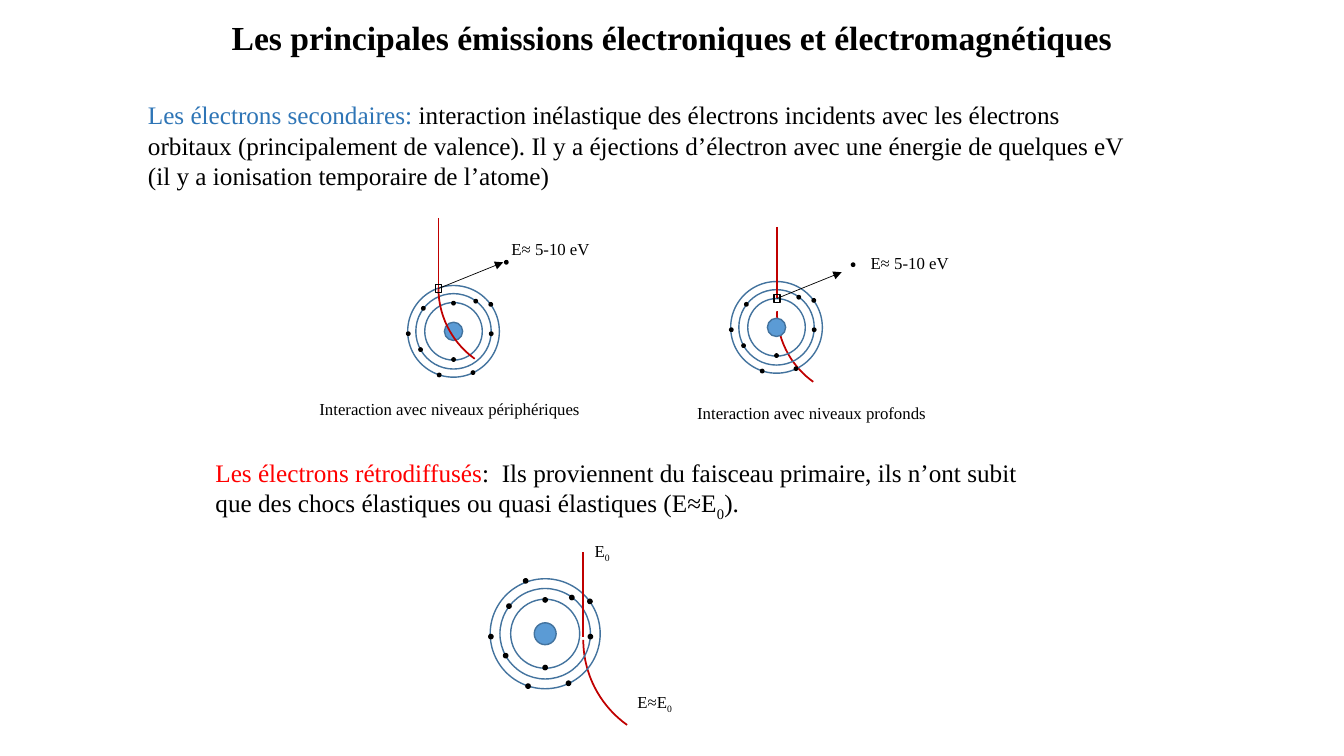
"""Build a slide on secondary and backscattered electron emission."""
from dataclasses import dataclass

from pptx import Presentation
from pptx.dml.color import RGBColor
from pptx.enum.shapes import MSO_CONNECTOR, MSO_SHAPE
from pptx.enum.text import MSO_AUTO_SIZE, PP_ALIGN
from pptx.oxml.ns import qn
from pptx.oxml.xmlchemy import OxmlElement
from pptx.shapes.autoshape import Shape
from pptx.shapes.connector import Connector
from pptx.shapes.shapetree import GroupShapes, SlideShapes
from pptx.util import Cm, Pt

ARC, OVAL, RECT = MSO_SHAPE.ARC, MSO_SHAPE.OVAL, MSO_SHAPE.RECTANGLE
STRAIGHT = MSO_CONNECTOR.STRAIGHT
FIT_TEXT = MSO_AUTO_SIZE.SHAPE_TO_FIT_TEXT
LEFT, CENTER = PP_ALIGN.LEFT, PP_ALIGN.CENTER

Shapes = SlideShapes | GroupShapes
Point = tuple[float, float]


@dataclass(frozen=True)
class Theme:
    """Colours and type sizes of the slide."""
    font: str = "Times New Roman"
    title: int = 24
    body: int = 18
    label: int = 12
    black: str = "000000"
    blue: str = "2E75B6"
    red: str = "FF0000"
    beam: str = "C00000"
    nucleus: str = "5B9BD5"
    orbit: str = "43739E"


THEME = Theme()


@dataclass(frozen=True)
class Span:
    """A piece of text with its own colour or subscript."""
    text: str
    color: str = THEME.black
    subscript: bool = False


@dataclass(frozen=True)
class Text:
    """A text box in centimetres."""
    left: float
    top: float
    width: float
    height: float
    spans: tuple[Span, ...]
    size: int = THEME.label
    align: PP_ALIGN = LEFT
    wrap: bool = False
    bold: bool = False


@dataclass(frozen=True)
class Interaction:
    """An atom, the beam that meets it and its labels."""
    center: Point
    electrons: tuple[Point, ...]
    beam_start: Point
    beam_length: float
    arc: tuple[float, float, float]
    labels: tuple[Text, ...]
    scale: float = 1
    ejected: Point | None = None
    arc_in_front: bool = False


NUCLEUS, ORBITS, ELECTRON = 0.46, (1.45, 1.9, 2.31), 0.12
HOLE = (0.15, 0.2)
EJECTION = (1.63, -0.66)
ARC_ANGLES = (162, 194.674)
INNER_TOP = (0, -0.71)
OUTER_TOP = (-0.41, -1.11)
ELECTRONS = (
    (0, 0.71), (0.56, -0.76), (-0.83, 0.46), (0.95, 0.06), (-0.76, -0.58),
    (0.94, -0.68), (0.49, 1.04), (-1.14, 0.06), (-0.36, 1.1),
)
ENERGY = (Span("E≈ 5-10 eV"),)
ZERO = Span("0", subscript=True)

TITLE = Text(5.59, 0.3, 23.04, 1.27, (
    Span("Les principales émissions électroniques et électromagnétiques"),
), THEME.title, bold=True)
SECONDARY = Text(3.48, 2.39, 25.43, 2.57, (
    Span("Les électrons secondaires: ", THEME.blue),
    Span("interaction inélastique des électrons incidents avec les électrons "
         "orbitaux (principalement de valence). Il y a éjections d’électron avec "
         "une énergie de quelques eV (il y a ionisation temporaire de l’atome)"),
), THEME.body, wrap=True)
BACKSCATTERED = Text(5.18, 11.4, 21.67, 1.8, (
    Span("Les électrons rétrodiffusés", THEME.red),
    Span(":  Ils proviennent du faisceau primaire, ils n’ont subit que des chocs "
         "élastiques ou quasi élastiques (E≈E"),
    ZERO, Span(")."),
), THEME.body, wrap=True)

DEEP = Interaction(
    (19.57, 8.25), ELECTRONS, (19.58, 5.72), 1.8, (19.58, 5.66, 4.37),
    (Text(21.67, 6.25, 2.51, 0.76, ENERGY, align=CENTER),
     Text(17.32, 10.03, 6.53, 0.76, (Span("Interaction avec niveaux profonds"),))),
    ejected=(21.5, 6.67))
PERIPHERAL = Interaction(
    (11.43, 8.35), (INNER_TOP, *ELECTRONS), (11.05, 5.49), 1.78, (11.05, 5.08, 4.37),
    (Text(12.62, 5.89, 2.51, 0.76, ENERGY, align=CENTER),
     Text(7.8, 9.93, 7.29, 0.76, (Span("Interaction avec niveaux périphériques"),))),
    ejected=(12.76, 6.61), arc_in_front=True)
BACKSCATTER = Interaction(
    (13.74, 15.97), (INNER_TOP, OUTER_TOP, *ELECTRONS), (14.69, 13.92), 2.13,
    (14.7, 13.49, 5.27),
    (Text(14.35, 13.49, 1.65, 0.91, (Span("E"), ZERO), align=CENTER, wrap=True),
     Text(15.65, 17.3, 1.7, 0.91, (Span("E≈E"), ZERO), align=CENTER)),
    scale=1.2)


def add_text(shapes: Shapes, text: Text) -> None:
    """Add a text box with its coloured spans."""
    box = shapes.add_textbox(Cm(text.left), Cm(text.top), Cm(text.width), Cm(text.height))
    tf = box.text_frame
    tf.word_wrap = text.wrap
    tf.auto_size = FIT_TEXT
    p = tf.paragraphs[0]
    p.alignment = text.align
    p.font.name, p.font.size, p.font.bold = THEME.font, Pt(text.size), text.bold
    for span in text.spans:
        r = p.add_run()
        r.text = span.text
        r.font.color.rgb = RGBColor.from_string(span.color)
        if span.subscript:
            r.font._element.set("baseline", "-25000")


def add_outline(shapes: Shapes, kind: MSO_SHAPE, center: Point, width: float, height: float,
                line: str, fill: str | None = None, weight: float = 1) -> Shape:
    """Add a preset shape around its centre."""
    x, y = center
    sp = shapes.add_shape(kind, Cm(x - width / 2), Cm(y - height / 2), Cm(width), Cm(height))
    sp.shadow.inherit = False
    sp.line.color.rgb = RGBColor.from_string(line)
    sp.line.width = Pt(weight)
    if fill:
        sp.fill.solid()
        sp.fill.fore_color.rgb = RGBColor.from_string(fill)
    else:
        sp.fill.background()
    return sp


def add_electron(shapes: Shapes, center: Point, scale: float = 1) -> None:
    """Add a black dot without an outline."""
    size = ELECTRON * scale
    sp = add_outline(shapes, OVAL, center, size, size, THEME.black, THEME.black)
    sp.line.fill.background()


def add_line(shapes: Shapes, start: Point, end: Point, color: str, weight: float) -> Connector:
    """Add a straight line without a shadow."""
    line = shapes.add_connector(STRAIGHT, *map(Cm, start), *map(Cm, end))
    line.line.color.rgb = RGBColor.from_string(color)
    line.line.width = Pt(weight)
    line._element.spPr.append(OxmlElement("a:effectLst"))
    return line


def add_arc(shapes: Shapes, arc: tuple[float, float, float]) -> None:
    """Add the deviated end of the beam."""
    left, top, size = arc
    sp = add_outline(shapes, ARC, (left + size / 2, top + size / 2), size, size,
                     THEME.beam, weight=1.25)
    sp.adjustments[0], sp.adjustments[1] = ARC_ANGLES
    sp.rotation = 270
    sp._element.spPr.find(qn("a:xfrm")).set("flipH", "1")


def add_atom(shapes: Shapes, item: Interaction) -> None:
    """Add the nucleus, the orbits and their electrons."""
    x, y = item.center
    for size, fill in ((NUCLEUS, THEME.nucleus), *((d, None) for d in ORBITS)):
        diameter = size * item.scale
        add_outline(shapes, OVAL, item.center, diameter, diameter, THEME.orbit, fill)
    for dx, dy in item.electrons:
        add_electron(shapes, (x + dx * item.scale, y + dy * item.scale), item.scale)


def add_ejection(shapes: Shapes, origin: Point, electron: Point) -> None:
    """Add the vacancy, the arrow and the ejected electron."""
    add_electron(shapes, electron)
    tip = (origin[0] + EJECTION[0], origin[1] + EJECTION[1])
    arrow = add_line(shapes, origin, tip, THEME.black, 0.5)
    head = OxmlElement("a:tailEnd")
    head.set("type", "triangle")
    arrow.line._get_or_add_ln().append(head)
    add_outline(shapes, RECT, origin, *HOLE, THEME.black)


def add_interaction(shapes: Shapes, item: Interaction) -> None:
    """Add one grouped diagram."""
    group = shapes.add_group_shape().shapes
    x, y = item.beam_start
    impact = (x, y + item.beam_length)
    if not item.arc_in_front:
        add_arc(group, item.arc)
    add_atom(group, item)
    add_line(group, item.beam_start, impact, THEME.beam, 1.25)
    if item.arc_in_front:
        add_arc(group, item.arc)
    if item.ejected:
        add_ejection(group, impact, item.ejected)
    for label in item.labels:
        add_text(group, label)


def main() -> None:
    """Build and save the slide."""
    prs = Presentation()
    prs.slide_width, prs.slide_height = Cm(33.87), Cm(19.05)
    shapes = prs.slides.add_slide(prs.slide_layouts[6]).shapes
    add_text(shapes, SECONDARY)
    add_text(shapes, TITLE)
    add_interaction(shapes, DEEP)
    add_interaction(shapes, PERIPHERAL)
    add_text(shapes, BACKSCATTERED)
    add_interaction(shapes, BACKSCATTER)
    prs.save("out.pptx")


if __name__ == "__main__":
    main()
